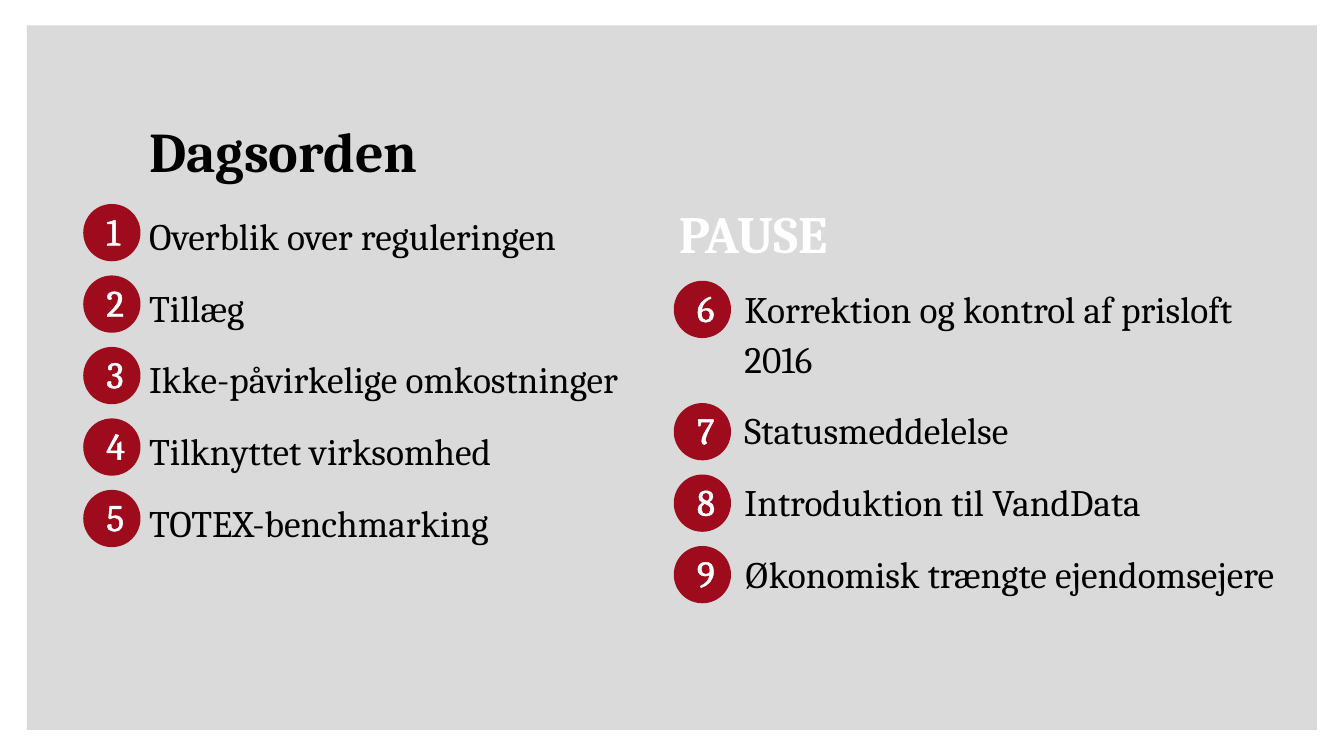
from lxml import etree
from pptx import Presentation, util as u
from pptx.dml.color import RGBColor
from pptx.enum import shapes, text
from pptx.oxml.ns import qn

COLORS = {"panel": "DADADA", "badge": "9E0B1D", "ink": "000000", "light": "FFFFFF"}


class AgendaSlide:
    font = "Cambria"
    diameter = 0.87
    pitch = 1.35

    def __init__(self, slide):
        self.slide = slide

    def color(self, name):
        return RGBColor.from_string(COLORS[name])

    def fill_text(self, frame, lines, margins, size, color, bold=False,
                  anchor=text.MSO_ANCHOR.TOP, **spacing):
        frame.word_wrap = True
        frame.vertical_anchor = anchor
        for side, margin in zip(("left", "top", "right", "bottom"), margins):
            setattr(frame, f"margin_{side}", u.Cm(margin))
        for index, line in enumerate(lines):
            paragraph = frame.paragraphs[0] if index == 0 else frame.add_paragraph()
            for key, value in spacing.items():
                if index or key != "space_before":
                    setattr(paragraph, key, value)
            run = paragraph.add_run()
            run.text = line
            for key, value in {"name": self.font, "size": u.Pt(size), "bold": bold}.items():
                setattr(run.font, key, value)
            run.font.color.rgb = self.color(color)

    def shape(self, kind, left, top, width, height, fill):
        shape = self.slide.shapes.add_shape(kind, *map(u.Cm, (left, top, width, height)))
        shape.shadow.inherit = False
        shape.fill.solid()
        shape.fill.fore_color.rgb = self.color(fill)
        return shape

    def panel(self, left, top, width, height):
        panel = self.shape(shapes.MSO_SHAPE.RECTANGLE, left, top, width, height, "panel")
        panel.line.fill.background()

    def text_box(self, left, top, width, height, lines, **style):
        box = self.slide.shapes.add_textbox(*map(u.Cm, (left, top, width, height)))
        self.fill_text(box.text_frame, lines, (0, 0, 0, 0), **style)

    def badge(self, number, left, top):
        badge = self.shape(shapes.MSO_SHAPE.OVAL, left, top, self.diameter, self.diameter, "badge")
        badge.line.color.rgb = self.color("badge")
        badge.line.width = u.Pt(6)
        self.fill_text(badge.text_frame, [str(number)], (0.41, 0.25, 0.41, 0.25), 20, "light",
                       anchor=text.MSO_ANCHOR.MIDDLE, alignment=text.PP_ALIGN.CENTER,
                       line_spacing=0.94)
        properties = badge.text_frame.paragraphs[0].runs[0].font._element
        outline = etree.Element(qn("a:ln"), w=str(u.Pt(1.45)))
        fill = etree.SubElement(outline, qn("a:solidFill"))
        etree.SubElement(fill, qn("a:srgbClr"), val=COLORS["light"])
        properties.insert(0, outline)

    def badges(self, numbers, left, top):
        for row, number in enumerate(numbers):
            self.badge(number, left, top + row * self.pitch)

    def topics(self, left, top, lines):
        self.text_box(left, top, 10.06, 10, lines, size=20, color="ink",
                      line_spacing=1.1, space_before=u.Pt(12))


def main():
    deck = Presentation()
    deck.slide_width, deck.slide_height = u.Cm(25.4), u.Cm(14.28)
    agenda = AgendaSlide(deck.slides.add_slide(deck.slide_layouts[6]))

    agenda.panel(0.51, 0.48, 24.38, 13.31)
    agenda.text_box(2.82, 1.55, 19.3, 1.93, ["Dagsorden"], size=30, color="ink",
                    bold=True, anchor=text.MSO_ANCHOR.BOTTOM, line_spacing=0.9)
    agenda.topics(2.82, 3.94, [
        "Overblik over reguleringen",
        "Tillæg",
        "Ikke-påvirkelige omkostninger",
        "Tilknyttet virksomhed",
        "TOTEX-benchmarking",
    ])
    agenda.badges(range(1, 6), 1.68, 3.96)

    agenda.text_box(12.83, 3.81, 9.42, 1.19, ["PAUSE"], size=28, color="light", bold=True)
    agenda.topics(14.07, 5.33, [
        "Korrektion og kontrol af prisloft 2016",
        "Statusmeddelelse",
        "Introduktion til VandData",
        "Økonomisk trængte ejendomsejere",
    ])
    agenda.badge(6, 12.84, 5.41)
    agenda.badges(range(7, 10), 12.84, 7.72)

    deck.save("out.pptx")


if __name__ == "__main__":
    main()
